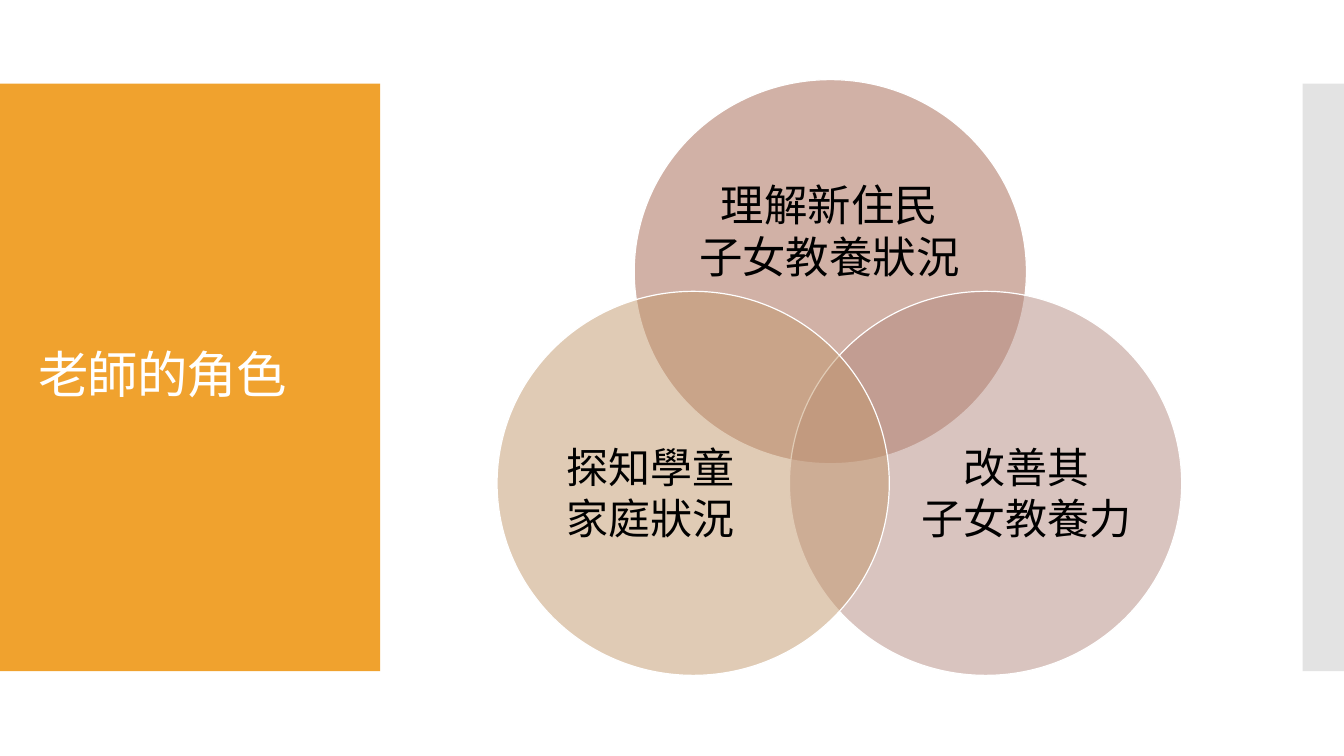
import pptx
import pptx.dml.color
import pptx.enum.shapes
import pptx.enum.text
import pptx.oxml.ns
import pptx.util
import lxml.etree
import dataclasses

Inches = pptx.util.Inches
Pt = pptx.util.Pt
Shape = pptx.enum.shapes.MSO_SHAPE
Align = pptx.enum.text.PP_ALIGN


@dataclasses.dataclass
class Theme:
    font: str = "Cabin"
    panel: str = "F0A22E"
    strip: str = "C8C8C8"
    white: str = "FFFFFF"
    black: str = "000000"
    top: str = "A5644E"
    right: str = "B58B80"
    left: str = "C3986D"
    title: int = 36
    large: int = 31
    label: int = 30
    line: float = 0.85


class Page:
    def __init__(self, deck, theme):
        self.theme = theme
        self.slide = deck.slides.add_slide(deck.slide_layouts[6])

    def shape(self, kind, box, fill, line=None, alpha=None):
        item = self.slide.shapes.add_shape(kind, *map(Inches, box))
        item.shadow.inherit = False
        item.fill.solid()
        item.fill.fore_color.rgb = pptx.dml.color.RGBColor.from_string(fill)
        if alpha is not None:
            tint = item.fill._xPr.find(".//" + pptx.oxml.ns.qn("a:srgbClr"))
            lxml.etree.SubElement(tint, pptx.oxml.ns.qn("a:alpha")).set("val", str(alpha * 1000))
        if line:
            item.line.color.rgb = pptx.dml.color.RGBColor.from_string(line)
            item.line.width = Pt(self.theme.line)
        else:
            item.line.fill.background()

    def text(self, box, lines, size, color, align, inset=0, after=0, track=0):
        frame = self.slide.shapes.add_textbox(*map(Inches, box)).text_frame
        frame.word_wrap = True
        frame.vertical_anchor = pptx.enum.text.MSO_ANCHOR.MIDDLE
        frame.margin_left = frame.margin_right = Inches(inset)
        frame.margin_top = frame.margin_bottom = Inches(inset / 2)
        for index, line in enumerate(lines):
            para = frame.add_paragraph() if index else frame.paragraphs[0]
            run = para.add_run()
            run.text = line
            if track:
                run._r.get_or_add_rPr().set("spc", str(track))
            para.alignment = align
            para.line_spacing = 0.9
            para.space_after = Pt(after)
            para.font.name = self.theme.font
            para.font.size = Pt(size)
            para.font.color.rgb = pptx.dml.color.RGBColor.from_string(color)

    def circle(self, left, top, fill, box, lines, size):
        self.shape(Shape.OVAL, (left, top, 3.89, 3.81), fill, self.theme.white, 50)
        self.text(box, lines, size, self.theme.black, Align.CENTER, after=4)


def main():
    theme = Theme()
    deck = pptx.Presentation()
    deck.slide_width = Inches(13.33)
    deck.slide_height = Inches(7.5)
    page = Page(deck, theme)

    # Side panels and title
    page.shape(Shape.RECTANGLE, (0, 0.83, 3.77, 5.83), theme.panel)
    page.shape(Shape.RECTANGLE, (12.92, 0.83, 0.41, 5.83), theme.strip, alpha=50)
    page.text((0.28, 1.23, 3.22, 5.03), ["老師的角色"], theme.title, theme.white,
              Align.LEFT, inset=0.1, track=-60)

    # Venn circles, back to front
    page.circle(6.29, 0.79, theme.top, (6.8, 1.46, 2.85, 1.71),
                ["理解新住民", "子女教養狀況"], theme.large)
    page.circle(7.83, 2.89, theme.right, (9.02, 3.87, 2.33, 2.09),
                ["改善其", "子女教養力"], theme.label)
    page.circle(4.93, 2.89, theme.left, (5.29, 3.87, 2.33, 2.09),
                ["探知學童", "家庭狀況"], theme.label)

    deck.save("out.pptx")


if __name__ == "__main__":
    main()
